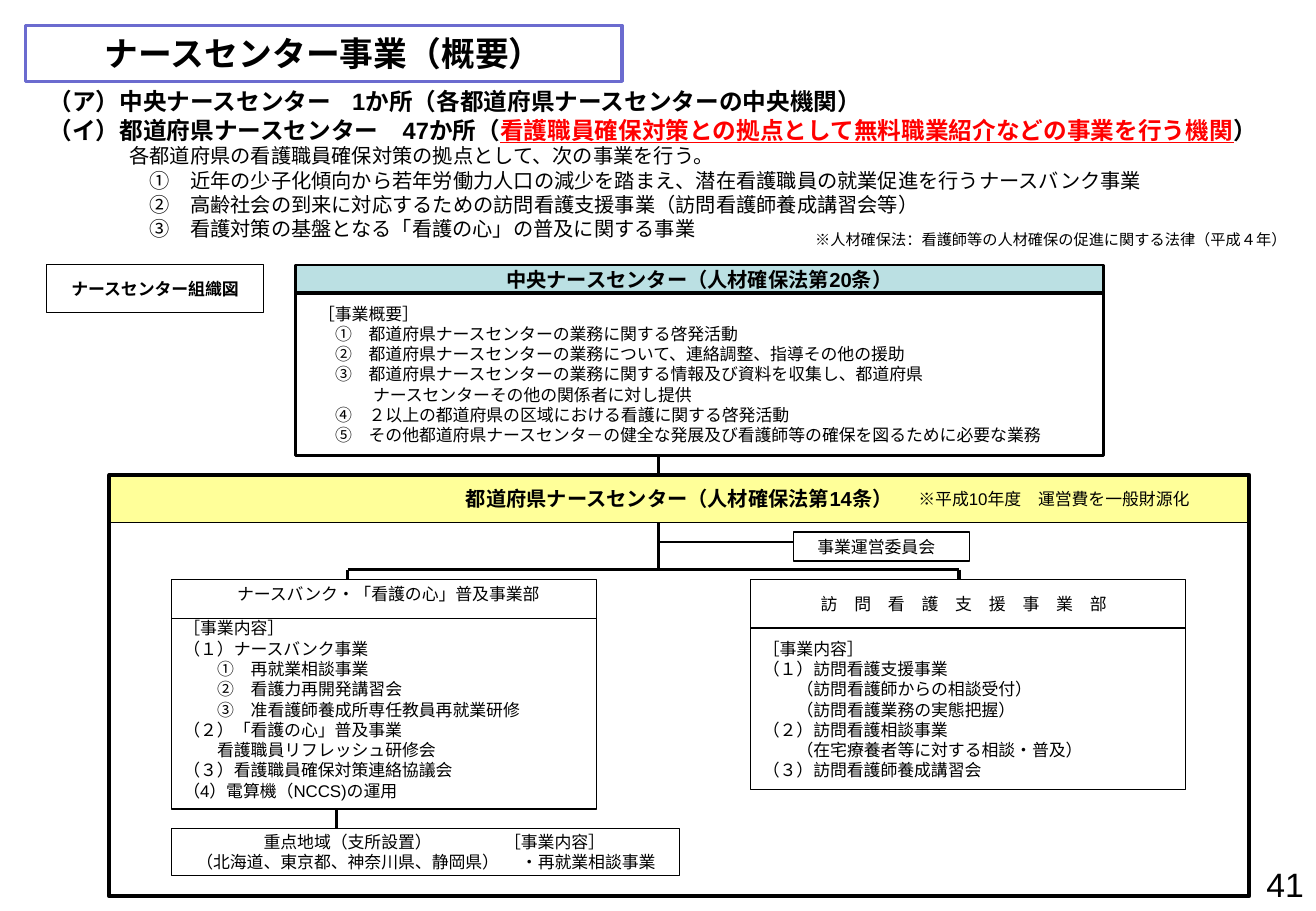
"""Build the one-page overview of the nurse centre programme."""
from dataclasses import dataclass
from typing import Optional

from lxml import etree
from pptx import Presentation
from pptx.dml.color import RGBColor
from pptx.enum.shapes import MSO_CONNECTOR, MSO_SHAPE
from pptx.enum.text import MSO_ANCHOR, MSO_AUTO_SIZE, PP_ALIGN
from pptx.oxml.ns import qn
from pptx.util import Inches, Pt

BLACK = RGBColor(0x00, 0x00, 0x00)
WHITE = RGBColor(0xFF, 0xFF, 0xFF)
RED = RGBColor(0xFF, 0x00, 0x00)
VIOLET = RGBColor(0x6B, 0x6B, 0xCF)
AQUA = RGBColor(0xBB, 0xE0, 0xE3)
YELLOW = RGBColor(0xFF, 0xFF, 0x99)
RECTANGLE = MSO_SHAPE.RECTANGLE
STRAIGHT = MSO_CONNECTOR.STRAIGHT
MIDDLE = MSO_ANCHOR.MIDDLE
FIXED = MSO_AUTO_SIZE.NONE
LEFT, CENTER, RIGHT = PP_ALIGN.LEFT, PP_ALIGN.CENTER, PP_ALIGN.RIGHT
LATIN, JAPANESE = "Arial", "Noto Sans CJK JP"
WIDTH, HEIGHT = Inches(10.83), Inches(7.5)


@dataclass(frozen=True)
class Area:
    """A rectangle in percent of the slide's width and height."""
    left: float
    top: float
    width: float
    height: float


@dataclass(frozen=True)
class Span:
    """A stretch of text, optionally stressed in underlined red."""
    text: str
    stressed: bool = False


@dataclass(frozen=True)
class Line:
    """A paragraph, its indent in character widths and its tab stop in inches."""
    spans: tuple[Span, ...]
    indent: float = 0
    size: float = 10
    bold: bool = False
    tab: float = 0


@dataclass(frozen=True)
class Label:
    """A text block with its area, alignment and font."""
    area: Area
    lines: tuple[Line, ...]
    align: PP_ALIGN = LEFT
    font: str = LATIN


@dataclass(frozen=True)
class Frame:
    """A rectangle with an optional fill and outline."""
    area: Area
    weight: float = 0
    fill: Optional[RGBColor] = None


@dataclass(frozen=True)
class Link:
    """A straight line between two points in percent of the slide."""
    x1: float
    y1: float
    x2: float
    y2: float
    weight: float = 1.5


def across(share: float) -> int:
    """Turn a share of the slide's width into a length."""
    return round(WIDTH * share / 100)


def down(share: float) -> int:
    """Turn a share of the slide's height into a length."""
    return round(HEIGHT * share / 100)


def plain(text: str, indent: float = 0, size: float = 10, bold: bool = False, tab: float = 0) -> Line:
    """Make a line of one span."""
    return Line((Span(text),), indent, size, bold, tab)


def bounds(area: Area) -> tuple[int, int, int, int]:
    """Give the left, top, width and height of an area."""
    return across(area.left), down(area.top), across(area.width), down(area.height)


def write(box, label: Label) -> None:
    """Fill a shape with the lines of a label."""
    frame = box.text_frame
    frame.word_wrap, frame.auto_size, frame.vertical_anchor = True, FIXED, MIDDLE
    frame.margin_top = frame.margin_bottom = 0
    for number, line in enumerate(label.lines):
        para = frame.paragraphs[0] if number == 0 else frame.add_paragraph()
        para.alignment = label.align
        properties = para._p.get_or_add_pPr()
        properties.set("marL", str(Pt(line.indent * line.size)))
        properties.set("indent", "0")
        if line.tab:
            stops = etree.SubElement(properties, qn("a:tabLst"))
            etree.SubElement(stops, qn("a:tab"), pos=str(Inches(line.tab)), algn="l")
        for span in line.spans:
            run = para.add_run()
            run.text = span.text
            font = run.font
            font.size, font.bold, font.name = Pt(line.size), line.bold, label.font
            font.underline = span.stressed
            font.color.rgb = RED if span.stressed else BLACK
            etree.SubElement(run._r.get_or_add_rPr(), qn("a:ea"), typeface=JAPANESE)


def draw_frame(page, frame: Frame) -> None:
    """Draw a rectangle."""
    box = page.shapes.add_shape(RECTANGLE, *bounds(frame.area))
    box.shadow.inherit = False
    if frame.fill is None:
        box.fill.background()
    else:
        box.fill.solid()
        box.fill.fore_color.rgb = frame.fill
    if frame.weight:
        box.line.color.rgb, box.line.width = BLACK, Pt(frame.weight)
    else:
        box.line.fill.background()


def draw_link(page, link: Link) -> None:
    """Draw a straight line."""
    line = page.shapes.add_connector(STRAIGHT, across(link.x1), down(link.y1), across(link.x2), down(link.y2))
    line.line.color.rgb, line.line.width = BLACK, Pt(link.weight)
    etree.SubElement(line._element.spPr, qn("a:effectLst"))


CHART_NAME = Area(3.51, 29.07, 16.53, 5.2)
CENTRAL_HEAD = Area(22.44, 29.07, 61.4, 3.2)
LOCAL_HEAD = Area(8.31, 52.13, 86.61, 5.2)
TITLE = Label(Area(1.94, 2.8, 45.34, 6.13), (plain("ナースセンター事業（概要）", 0, 20, True),), CENTER, JAPANESE)
FRAMES = (
    Frame(CHART_NAME, 0.75, WHITE),
    Frame(CENTRAL_HEAD, 1.5, AQUA),
    Frame(Area(22.44, 32.13, 61.4, 17.87), 1.5),
    Frame(LOCAL_HEAD, 0, YELLOW),
    Frame(Area(8.31, 52.13, 86.61, 46.27), 2.25),
    Frame(Area(60.3, 58.4, 13.39, 3.2), 0.75),
    Frame(Area(13.02, 63.6, 32.32, 25.2), 0.75),
    Frame(Area(57.06, 63.6, 33.06, 23.07), 0.75),
    Frame(Area(13.02, 90.93, 38.6, 5.2), 0.75),
)
LINKS = (
    Link(8.31, 57.33, 94.92, 57.33, 0.75),
    Link(13.02, 67.87, 45.34, 67.87, 0.75),
    Link(57.06, 68.93, 90.12, 68.93, 0.75),
    Link(50.05, 50, 50.05, 52.13),
    Link(50.05, 57.33, 50.05, 62.53),
    Link(50.05, 59.47, 60.3, 59.47),
    Link(26.41, 62.53, 72.85, 62.53),
    Link(25.58, 88.8, 25.58, 90.93),
    Link(26.41, 62.53, 26.41, 63.6, 2.25),
    Link(72.85, 62.53, 72.85, 63.6, 2.25),
)
LABELS = (
    Label(Area(2.77, 9.07, 95.29, 17.87), (
        plain("（ア）中央ナースセンター\t1か所（各都道府県ナースセンターの中央機関）", 0, 14, True, 3.34),
        Line((Span("（イ）都道府県ナースセンター　47か所（"),
              Span("看護職員確保対策との拠点として無料職業紹介などの事業を行う機関", True), Span("）")), 0, 14, True),
        plain("各都道府県の看護職員確保対策の拠点として、次の事業を行う。", 4, 12),
        plain("①　近年の少子化傾向から若年労働力人口の減少を踏まえ、潜在看護職員の就業促進を行うナースバンク事業", 5, 12),
        plain("②　高齢社会の到来に対応するための訪問看護支援事業（訪問看護師養成講習会等）", 5, 12),
        plain("③　看護対策の基盤となる「看護の心」の普及に関する事業", 5, 12))),
    Label(CHART_NAME, (plain("ナースセンター組織図", bold=True),), CENTER),
    Label(CENTRAL_HEAD, (plain("中央ナースセンター（人材確保法第20条）", 0, 12, True),), CENTER),
    Label(Area(23.27, 34.27, 59.83, 13.6), (
        plain("［事業概要］"), plain("①　都道府県ナースセンターの業務に関する啓発活動", 1),
        plain("②　都道府県ナースセンターの業務について、連絡調整、指導その他の援助", 1),
        plain("③　都道府県ナースセンターの業務に関する情報及び資料を収集し、都道府県", 1),
        plain("ナースセンターその他の関係者に対し提供", 3.25),
        plain("④　２以上の都道府県の区域における看護に関する啓発活動", 1),
        plain("⑤　その他都道府県ナースセンタ－の健全な発展及び看護師等の確保を図るために必要な業務", 1))),
    Label(LOCAL_HEAD, (plain("都道府県ナースセンター（人材確保法第14条）", 0, 12, True),), CENTER),
    Label(Area(60.3, 58.4, 12.56, 3.2), (plain("事業運営委員会"),), CENTER),
    Label(Area(13.76, 63.6, 31.49, 3.2), (plain("ナースバンク・「看護の心」普及事業部"),), CENTER),
    Label(Area(13.02, 67.87, 32.32, 20), (
        plain("［事業内容］"), plain("（１）ナースバンク事業"), plain("①　再就業相談事業", 2),
        plain("②　看護力再開発講習会", 2), plain("③　准看護師養成所専任教員再就業研修", 2),
        plain("（２）「看護の心」普及事業"), plain("看護職員リフレッシュ研修会", 2),
        plain("（３）看護職員確保対策連絡協議会"), plain("（4）電算機（NCCS)の運用"))),
    Label(Area(13.02, 90.93, 26.78, 5.2), (
        plain("重点地域（支所設置）"), plain("（北海道、東京都、神奈川県、静岡県）")), CENTER),
    Label(Area(37.4, 90.93, 14.22, 5.2), (plain("［事業内容］"), plain("・再就業相談事業", 1))),
    Label(Area(57.06, 64.67, 32.32, 3.2), (plain("訪　問　看　護　支　援　事　業　部"),), CENTER),
    Label(Area(57.06, 68.93, 33.06, 17.87), (
        plain("［事業内容］"), plain("（１）訪問看護支援事業"), plain("（訪問看護師からの相談受付）", 2),
        plain("（訪問看護業務の実態把握）", 2), plain("（２）訪問看護相談事業"),
        plain("（在宅療養者等に対する相談・普及）", 2), plain("（３）訪問看護師養成講習会"))),
    Label(Area(68.88, 52.13, 25.21, 5.2), (plain("※平成10年度　運営費を一般財源化"),)),
    Label(Area(61.03, 23.73, 38.5, 5.2), (
        plain("※人材確保法：看護師等の人材確保の促進に関する法律（平成４年）", 0, 9),), LEFT, JAPANESE),
    Label(Area(76.73, 94.4, 23.27, 5.33), (plain("41", 0, 20),), RIGHT),
)


def main() -> None:
    """Build and save the deck."""
    deck = Presentation()
    deck.slide_width, deck.slide_height = WIDTH, HEIGHT
    page = deck.slides.add_slide(deck.slide_layouts[5])
    title = page.shapes.title
    title.left, title.top, title.width, title.height = bounds(TITLE.area)
    title.line.color.rgb, title.line.width = VIOLET, Pt(2)
    write(title, TITLE)
    for frame in FRAMES:
        draw_frame(page, frame)
    for link in LINKS:
        draw_link(page, link)
    for label in LABELS:
        write(page.shapes.add_textbox(*bounds(label.area)), label)
    deck.save("out.pptx")


if __name__ == "__main__":
    main()
